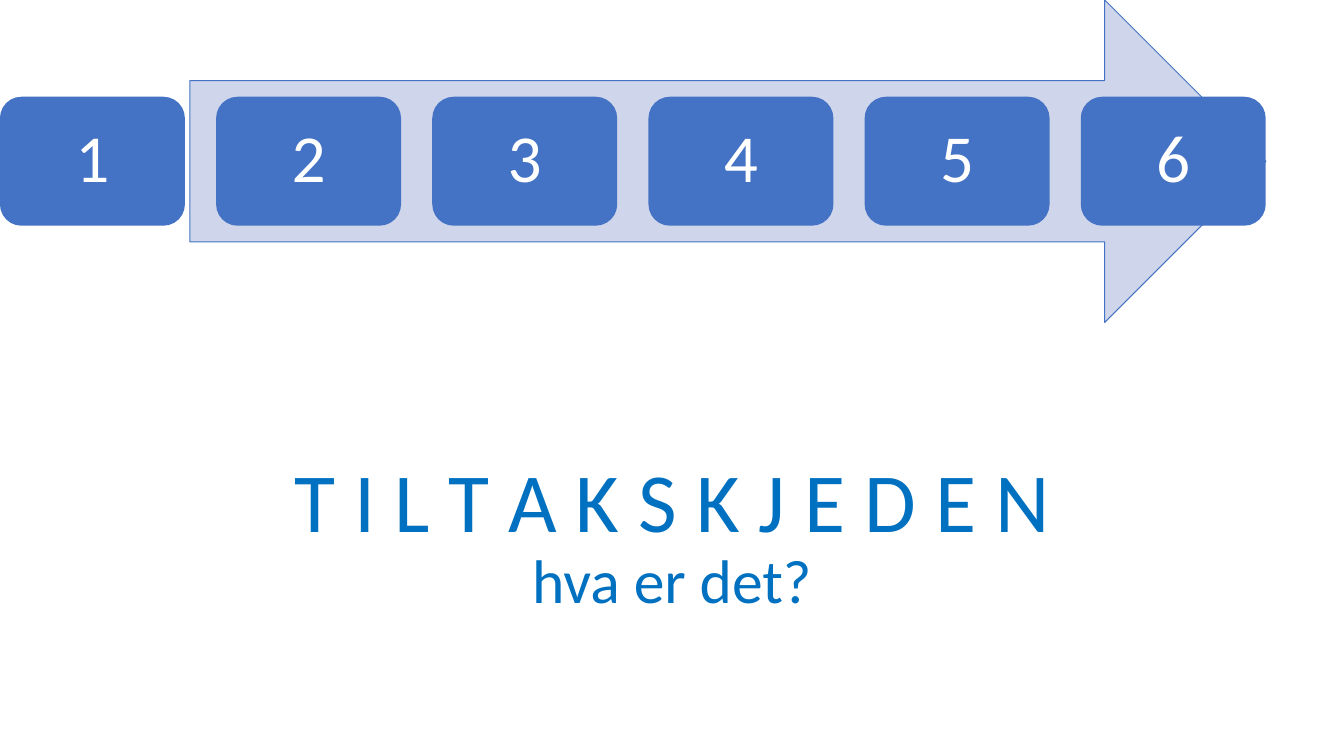
"""Build the title slide for the six-step chain of measures."""
from pptx import Presentation
from pptx.dml.color import RGBColor
from pptx.enum import shapes, text
from pptx.util import Pt

BLUE = RGBColor(0x44, 0x72, 0xC4)
PALE_BLUE = RGBColor(0xCF, 0xD5, 0xEA)
TITLE_BLUE = RGBColor(0x00, 0x70, 0xC0)
WHITE = RGBColor(0xFF, 0xFF, 0xFF)

FONT = "Calibri"
STEP_COUNT = 6
STEP_PITCH = 115.8
STEP_WIDTH, STEP_HEIGHT = 99.1, 69.1
ARROW_LEFT, ARROW_WIDTH, ARROW_HEIGHT = 101.7, 576.5, 172.8


def apply_format(target, values):
    """Set each named attribute on the target."""
    for name, value in values.items():
        setattr(target, name, value)


def add_filled_shape(slide, kind, box, fill):
    """Add a preset shape with a solid fill and no shadow."""
    shape = slide.shapes.add_shape(kind, *map(Pt, box))
    shape.shadow.inherit = False
    shape.fill.solid()
    shape.fill.fore_color.rgb = fill
    return shape


def add_run(paragraph, content, size, color):
    """Add a run of text in the slide font."""
    run = paragraph.add_run()
    run.text = content
    apply_format(run.font, {"name": FONT, "size": Pt(size)})
    run.font.color.rgb = color


def centre_text(frame, anchor):
    """Prepare a text frame and return its centred first paragraph."""
    apply_format(frame, {"word_wrap": True, "vertical_anchor": anchor})
    paragraph = frame.paragraphs[0]
    apply_format(paragraph, {"alignment": text.PP_ALIGN.CENTER, "line_spacing": 0.9})
    return paragraph


def add_arrow(slide):
    """Add the pale arrow behind the steps."""
    box = (ARROW_LEFT, 0, ARROW_WIDTH, ARROW_HEIGHT)
    arrow = add_filled_shape(slide, shapes.MSO_SHAPE.RIGHT_ARROW, box, PALE_BLUE)
    arrow.line.color.rgb = BLUE
    arrow.line.width = Pt(0.5)


def add_step(slide, number):
    """Add one numbered step, centred vertically on the arrow."""
    top = (ARROW_HEIGHT - STEP_HEIGHT) / 2
    box = ((number - 1) * STEP_PITCH, top, STEP_WIDTH, STEP_HEIGHT)
    step = add_filled_shape(slide, shapes.MSO_SHAPE.ROUNDED_RECTANGLE, box, BLUE)
    step.line.fill.background()
    paragraph = centre_text(step.text_frame, text.MSO_ANCHOR.MIDDLE)
    add_run(paragraph, str(number), 36, WHITE)


def add_title(slide):
    """Add the two-line title at the bottom of its box."""
    title = slide.shapes.add_textbox(Pt(90), Pt(66.3), Pt(540), Pt(267.8))
    paragraph = centre_text(title.text_frame, text.MSO_ANCHOR.BOTTOM)
    add_run(paragraph, "T I L T A K S K J E D E N", 45, TITLE_BLUE)
    paragraph.add_line_break()
    add_run(paragraph, "hva er det?", 33, TITLE_BLUE)


def main():
    """Build and save the slide."""
    presentation = Presentation()
    apply_format(presentation, {"slide_width": Pt(720), "slide_height": Pt(405)})
    slide = presentation.slides.add_slide(presentation.slide_layouts[6])
    add_title(slide)
    add_arrow(slide)
    for number in range(1, STEP_COUNT + 1):
        add_step(slide, number)
    presentation.save("out.pptx")


if __name__ == "__main__":
    main()
